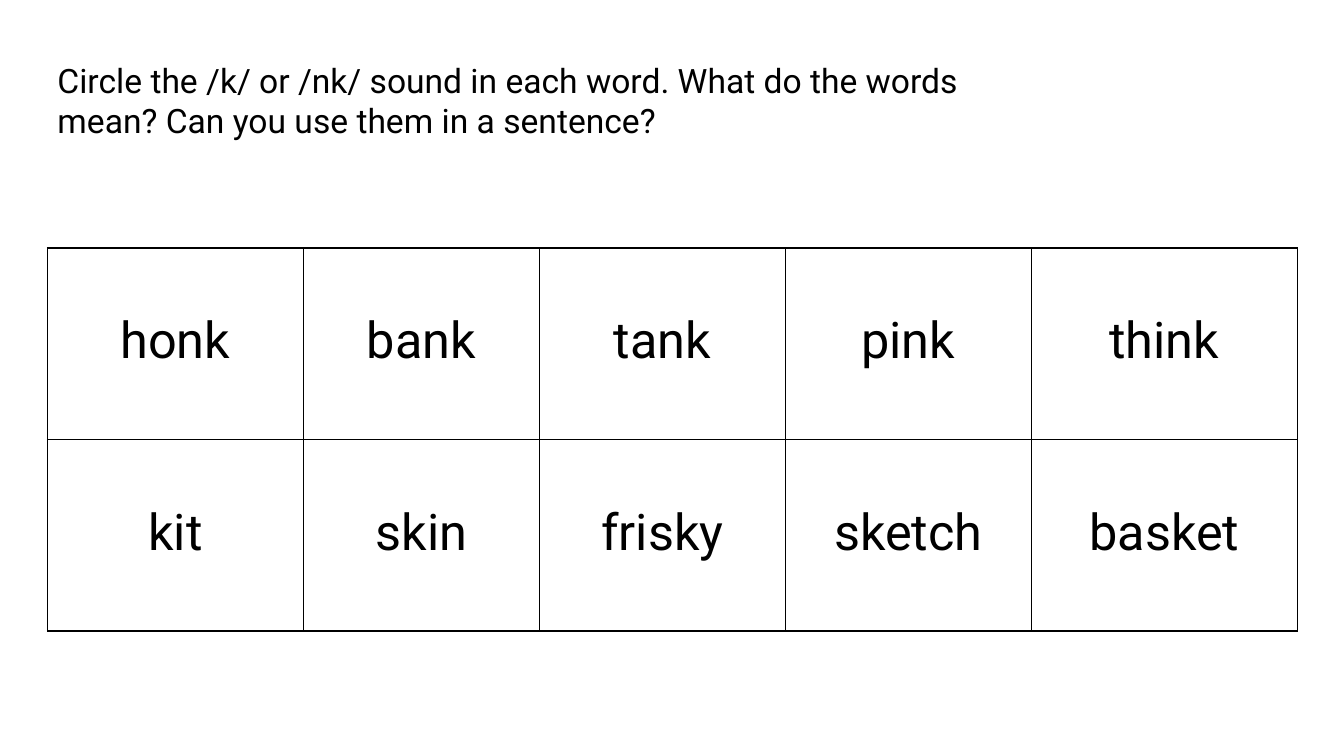
from lxml import etree
from pptx import Presentation
from pptx.dml.color import RGBColor
from pptx.enum.text import MSO_ANCHOR, MSO_AUTO_SIZE, PP_ALIGN
from pptx.oxml.ns import qn
from pptx.util import Inches, Pt

BLACK = RGBColor(0, 0, 0)
LEFT, CENTER = PP_ALIGN.LEFT, PP_ALIGN.CENTER
TOP, MIDDLE = MSO_ANCHOR.TOP, MSO_ANCHOR.MIDDLE
NO_FIT = MSO_AUTO_SIZE.NONE

WORDS = [
    ["honk", "bank", "tank", "pink", "think"],
    ["kit", "skin", "frisky", "sketch", "basket"],
]
WIDTHS = [2.54, 2.34, 2.44, 2.44, 2.64]
ROW = 1.9


class Sheet:
    """Style and current slide of the word sheet."""

    font = "Roboto"
    color = BLACK

    def __init__(self, deck):
        self.slide = deck.slides.add_slide(deck.slide_layouts[5])

    def style(self, para, size, align):
        para.alignment = align
        para.font.name = self.font
        para.font.size = Pt(size)
        para.font.color.rgb = self.color

    def title(self, text, left, top, width, height):
        box = self.slide.shapes.title
        box.left, box.top = Inches(left), Inches(top)
        box.width, box.height = Inches(width), Inches(height)
        frame = box.text_frame
        frame.text = text
        frame.word_wrap = True
        frame.auto_size = NO_FIT
        frame.vertical_anchor = TOP
        self.style(frame.paragraphs[0], 24, LEFT)

    def border(self, cell):
        props = cell._tc.get_or_add_tcPr()
        for i, side in enumerate(("a:lnL", "a:lnR", "a:lnT", "a:lnB")):
            line = etree.Element(qn(side), w=str(Pt(1)))
            fill = etree.SubElement(line, qn("a:solidFill"))
            etree.SubElement(fill, qn("a:srgbClr"), val=str(self.color))
            props.insert(i, line)

    def table(self, rows, widths, left, top, height):
        frame = self.slide.shapes.add_table(
            len(rows), len(widths), Inches(left), Inches(top),
            Inches(sum(widths)), Inches(height * len(rows)))
        grid = frame.table
        grid.first_row = grid.horz_banding = False
        for col, width in zip(grid.columns, widths):
            col.width = Inches(width)
        for r, words in enumerate(rows):
            grid.rows[r].height = Inches(height)
            for c, word in enumerate(words):
                cell = grid.cell(r, c)
                cell.text = word
                cell.fill.background()
                cell.vertical_anchor = MIDDLE
                cell.margin_bottom = Inches(0.09)
                self.style(cell.text_frame.paragraphs[0], 36, CENTER)
                self.border(cell)


def main():
    deck = Presentation()
    deck.slide_width, deck.slide_height = Inches(13.33), Inches(7.5)
    sheet = Sheet(deck)

    # Task
    sheet.title("Circle the /k/ or /nk/ sound in each word. What do the words "
                "mean? Can you use them in a sentence?", 0.47, 0.54, 9.38, 0.91)

    # Word grid
    sheet.table(WORDS, WIDTHS, 0.47, 2.46, ROW)

    deck.save("out.pptx")


if __name__ == "__main__":
    main()
